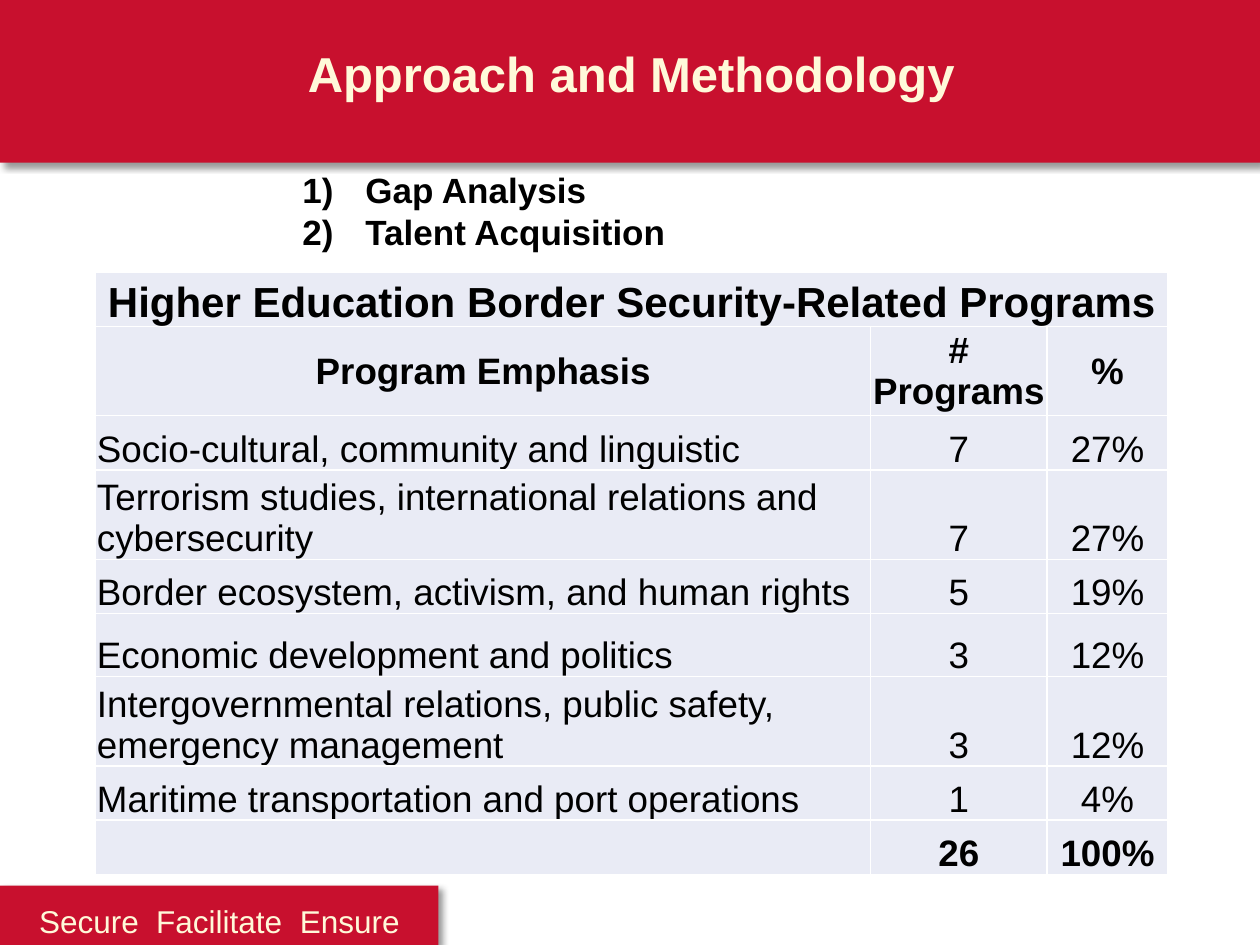
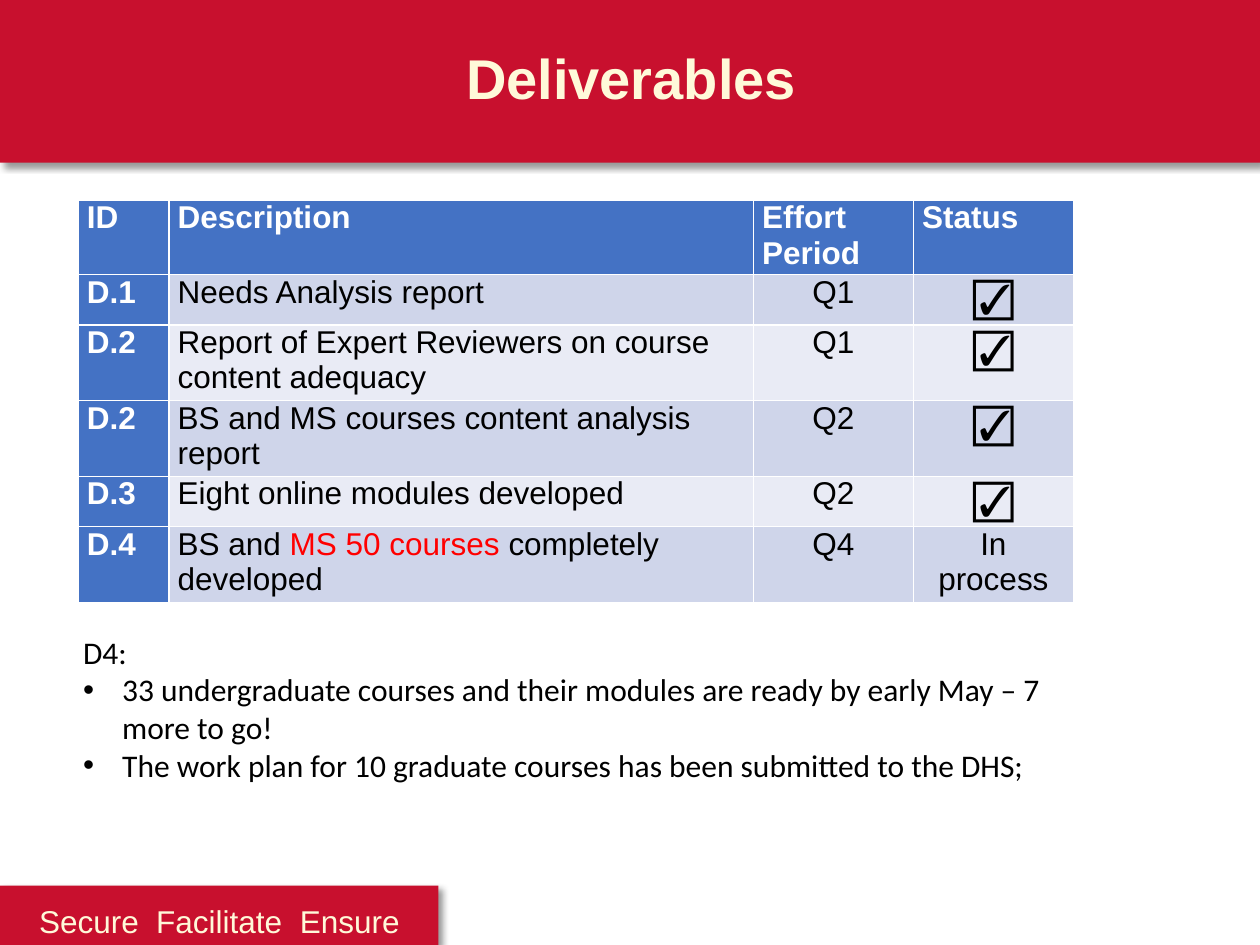
import pptx
import pptx.util
import pptx.dml.color
import pptx.enum.shapes
import pptx.enum.text
import pptx.oxml
import pptx.oxml.ns
from dataclasses import dataclass

Inches = pptx.util.Inches
Align = pptx.enum.text.PP_ALIGN
Anchor = pptx.enum.text.MSO_ANCHOR
RGB = pptx.dml.color.RGBColor.from_string
A_NS = pptx.oxml.ns.nsdecls("a")


@dataclass(frozen=True)
class Theme:
    red: str = "C8102E"
    cream: str = "FFF9D9"
    black: str = "000000"
    white: str = "FFFFFF"
    alert: str = "FF0000"
    blue: str = "4472C4"
    band_dark: str = "CFD5EA"
    band_light: str = "E9EBF5"
    font: str = "Arial"
    progress_font: str = "Calibri"
    text: int = 18
    agenda: int = 20
    programs: int = 21
    large: int = 24


theme = Theme()


def write(paragraph, text, size=theme.text, color=theme.black, bold=False,
          font=theme.font, align=Align.LEFT, bullet=None, indent=0):
    """Add a run to the paragraph; bullet is the XML of a bullet element."""
    paragraph.alignment = align
    paragraph.space_before = pptx.util.Pt(0)
    if bullet:
        properties = paragraph._p.get_or_add_pPr()
        properties.set("marL", str(Inches(indent)))
        properties.set("indent", str(-Inches(indent)))
        properties.append(pptx.oxml.parse_xml(bullet))
    run = paragraph.add_run()
    run.text = text
    run.font.size = pptx.util.Pt(size)
    run.font.name = font
    run.font.bold = bold
    run.font.color.rgb = RGB(color)


def add_grid(slide, left, top, widths, heights, side_inset, top_inset):
    """Add a table with the given column widths, row heights and insets."""
    table = slide.shapes.add_table(
        len(heights), len(widths), Inches(left), Inches(top),
        Inches(sum(widths)), Inches(sum(heights))).table
    table.horz_banding = False
    for column, width in zip(table.columns, widths):
        column.width = Inches(width)
    for row, height in zip(table.rows, heights):
        row.height = Inches(height)
    for cell in table.iter_cells():
        cell.margin_left = cell.margin_right = Inches(side_inset)
        cell.margin_top, cell.margin_bottom = Inches(top_inset), 0
    return table


prs = pptx.Presentation()
prs.slide_width, prs.slide_height = Inches(10), Inches(7.5)
layout = prs.slide_layouts[1]
for unused in list(layout.placeholders)[2:]:
    unused.element.getparent().remove(unused.element)

# Slides with their titles and body places
page_specs = [
    ("Approach and Methodology", 28, (1.01, 0.29, 8, 0.57), (2.3, 1.29, 7.5, 0.77)),
    ("Deliverables", 32, (2.01, 0.29, 6, 0.64), (0.56, 4.97, 8.01, 1.31)),
]
pages = []
for title, title_size, title_at, body_at in page_specs:
    page = prs.slides.add_slide(layout)
    body = page.placeholders[1]
    for holder, place in ((page.shapes.title, title_at), (body, body_at)):
        holder.left, holder.top, holder.width, holder.height = map(Inches, place)
        holder.text_frame.auto_size = pptx.enum.text.MSO_AUTO_SIZE.NONE
    body.text_frame.vertical_anchor = Anchor.TOP
    write(page.shapes.title.text_frame.paragraphs[0], title, size=title_size,
          color=theme.cream, bold=True, align=Align.CENTER)
    pages.append((page, body.text_frame))
(approach, agenda), (deliverables, progress) = pages

# Shared red bands, kept on the layout
bands = [
    approach.shapes.add_shape(pptx.enum.shapes.MSO_SHAPE.RECTANGLE, *map(Inches, place))
    for place in ((0, 0, 10, 1.29), (0, 7.03, 3.48, 0.47))
]
for band in bands:
    band.fill.solid()
    band.fill.fore_color.rgb = RGB(theme.red)
    band.line.fill.background()
    band.shadow.inherit = False
    band.element.spPr.find(pptx.oxml.ns.qn("a:effectLst")).append(pptx.oxml.parse_xml(
        f'<a:outerShdw {A_NS} blurRad="50800" dist="38100" dir="2700000" algn="tl" '
        f'rotWithShape="0"><a:srgbClr val="{theme.black}"><a:alpha val="40000"/>'
        '</a:srgbClr></a:outerShdw>'))
    layout.element.cSld.spTree.insert(2, band.element)

# Motto in the lower band, its words set on tab stops
motto = bands[1].text_frame
motto.vertical_anchor = Anchor.TOP
motto.margin_left, motto.margin_right, motto.margin_top = Inches(0.31), 0, Inches(0.07)
motto_line = motto.paragraphs[0]
motto_line.line_spacing = 1.19
stops = "".join(f'<a:tab pos="{Inches(stop)}" algn="l"/>' for stop in (0.93, 2.07))
motto_line._p.get_or_add_pPr().append(
    pptx.oxml.parse_xml(f"<a:tabLst {A_NS}>{stops}</a:tabLst>"))
write(motto_line, "Secure\tFacilitate\tEnsure", color=theme.cream)

# Slide 1: numbered agenda
for index, step in enumerate(("Gap Analysis", "Talent Acquisition")):
    line = agenda.add_paragraph() if index else agenda.paragraphs[0]
    write(line, step, size=theme.agenda, bold=True, indent=0.5,
          bullet=f'<a:buAutoNum {A_NS} type="arabicParenR"/>')

# Slide 1: programs by emphasis
program_rows = [
    ("Higher Education Border Security-Related Programs", "", ""),
    ("Program Emphasis", "# Programs", "%"),
    ("Socio-cultural, community and linguistic", "7", "27%"),
    ("Terrorism studies, international relations and cybersecurity", "7", "27%"),
    ("Border ecosystem, activism, and human rights", "5", "19%"),
    ("Economic development and politics", "3", "12%"),
    ("Intergovernmental relations, public safety, emergency management", "3", "12%"),
    ("Maritime transportation and port operations", "1", "4%"),
    ("", "26", "100%"),
]
programs = add_grid(approach, 0.76, 2.16, (6.15, 1.4, 0.96),
                    (0.43, 0.71, 0.43, 0.71, 0.43, 0.5, 0.71, 0.43, 0.43), 0.01, 0.01)
programs.first_row = False
programs.cell(0, 0).merge(programs.cell(0, 2))
last_row = len(program_rows) - 1
for r, values in enumerate(program_rows):
    for c, value in enumerate(values):
        cell = programs.cell(r, c)
        cell.fill.solid()
        cell.fill.fore_color.rgb = RGB(theme.band_light)
        cell.vertical_anchor = Anchor.MIDDLE if r == 1 else Anchor.BOTTOM
        if value:
            write(cell.text_frame.paragraphs[0], value,
                  size=theme.large if r == 0 else theme.programs,
                  bold=r in (0, 1, last_row),
                  align=Align.CENTER if c or r < 2 else Align.LEFT)

# Slide 2: deliverables and their status
deliverable_rows = [
    ("ID", "Description", "Effort Period", "Status"),
    ("D.1", "Needs Analysis report", "Q1", "☑"),
    ("D.2", "Report of Expert Reviewers on course content adequacy", "Q1", "☑"),
    ("D.2", "BS and MS courses content analysis report", "Q2", "☑"),
    ("D.3", "Eight online modules developed", "Q2", "☑"),
    ("D.4", "BS and MS 50 courses completely developed", "Q4", "In process"),
]
highlight = "MS 50 courses "
status = add_grid(deliverables, 0.62, 1.59, (0.72, 4.64, 1.27, 1.27),
                  (0.59, 0.4, 0.6, 0.6, 0.4, 0.6), 0.07, 0)
for r, values in enumerate(deliverable_rows):
    for c, value in enumerate(values):
        cell = status.cell(r, c)
        heading = r == 0 or c == 0
        row_fill = theme.band_dark if r % 2 else theme.band_light
        cell.fill.solid()
        cell.fill.fore_color.rgb = RGB(theme.blue if heading else row_fill)
        before, marked, after = value.partition(highlight)
        for part, color in ((before, theme.white if heading else theme.black),
                            (marked, theme.alert), (after, theme.black)):
            if part:
                write(cell.text_frame.paragraphs[0], part, color=color, bold=heading,
                      size=theme.large if part == "☑" else theme.text,
                      align=Align.CENTER if c > 1 and r else Align.LEFT)

# Slide 2: progress on D4
write(progress.paragraphs[0], "D4:", font=theme.progress_font,
      bullet=f"<a:buNone {A_NS}/>")
for item in (
    "33 undergraduate courses and their modules are ready by early May – 7 more to go!",
    "The work plan for 10 graduate courses has been submitted to the DHS;",
):
    write(progress.add_paragraph(), item, font=theme.progress_font, indent=0.31,
          bullet=f'<a:buChar {A_NS} char="•"/>')

prs.save("out.pptx")
